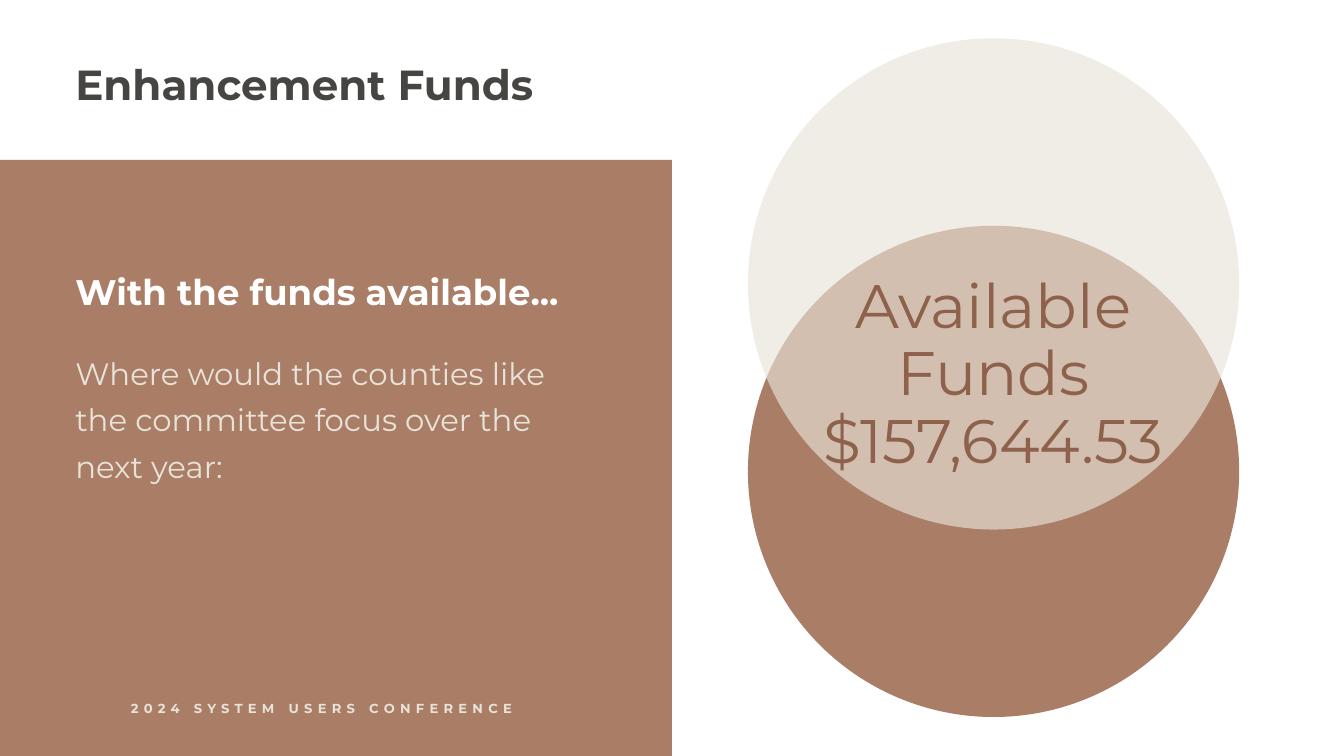
from lxml import etree
from pptx import Presentation
from pptx.dml.color import RGBColor
from pptx.enum.shapes import MSO_SHAPE
from pptx.enum.text import MSO_ANCHOR, MSO_AUTO_SIZE, PP_ALIGN
from pptx.oxml.ns import qn
from pptx.util import Inches, Pt

RECTANGLE, OVAL = MSO_SHAPE.RECTANGLE, MSO_SHAPE.OVAL
LEFT, CENTER = PP_ALIGN.LEFT, PP_ALIGN.CENTER
TOP, NO_FIT = MSO_ANCHOR.TOP, MSO_AUTO_SIZE.NONE

FONT = "Montserrat"
COLORS = {
    "clay": "AA7D66",
    "dark_clay": "8D614B",
    "sand": "E8E3D9",
    "charcoal": "464542",
    "white": "FFFFFF",
}
MARGIN = 1.12
CIRCLE_LEFT, CIRCLE_SIZE = 11.13, 7.31


def color(name):
    return RGBColor.from_string(COLORS[name])


def add_filled_shape(page, kind, left, top, width, height, fill, opacity=100):
    shape = page.shapes.add_shape(
        kind, Inches(left), Inches(top), Inches(width), Inches(height))
    shape.shadow.inherit = False
    shape.fill.solid()
    shape.fill.fore_color.rgb = color(fill)
    shape.line.fill.background()
    if opacity < 100:
        tone = shape.fill._xPr.find(".//" + qn("a:srgbClr"))
        etree.SubElement(tone, qn("a:alpha"), val=str(opacity * 1000))
    return shape


def add_text_box(page):
    return page.shapes.add_textbox(0, 0, 0, 0)


def write_text(box, place, lines, size, leading, tone,
               bold=False, align=LEFT, tracking=0):
    """Place a text box or placeholder and fill it, one paragraph a line."""
    box.left, box.top, box.width, box.height = [Inches(n) for n in place]
    frame = box.text_frame
    frame.word_wrap = True
    frame.auto_size = NO_FIT
    frame.vertical_anchor = TOP
    frame.margin_left = frame.margin_right = 0
    frame.margin_top = frame.margin_bottom = 0
    for index, line in enumerate(lines):
        para = frame.add_paragraph() if index else frame.paragraphs[0]
        para.alignment = align
        para.line_spacing = Pt(leading)
        para.space_before = Pt(0)
        span = para.add_run()
        span.text = line
        span.font.name = FONT
        span.font.size = Pt(size)
        span.font.bold = bold
        span.font.color.rgb = color(tone)
        if tracking:
            span.font._element.set("spc", str(int(tracking * 100)))


def remove_bullets(box):
    for para in box.text_frame.paragraphs:
        properties = para._p.get_or_add_pPr()
        properties.set("marL", "0")
        properties.set("indent", "0")
        etree.SubElement(properties, qn("a:buNone"))


def send_to_back(page, shape):
    page.shapes._spTree.insert(2, shape._element)


def main():
    deck = Presentation()
    deck.slide_width, deck.slide_height = Inches(20), Inches(11.25)
    page = deck.slides.add_slide(deck.slide_layouts[1])

    # Left panel, behind the placeholders
    panel = add_filled_shape(page, RECTANGLE, 0, 2.38, 10, 8.87, "clay")
    send_to_back(page, panel)

    # Title and question
    write_text(page.shapes.title, (MARGIN, 0.93, 7.31, 1.39),
               ["Enhancement Funds"], 45, 49.5, "charcoal", bold=True)
    question = page.placeholders[1]
    write_text(question, (MARGIN, 5.13, 7.44, 2.02),
               ["Where would the counties like the committee focus "
                "over the next year:"], 33, 49.8, "sand")
    remove_bullets(question)

    # Overlapping circles
    for top, fill, opacity in ((3.36, "clay", 100), (0.57, "sand", 65)):
        add_filled_shape(page, OVAL, CIRCLE_LEFT, top,
                         CIRCLE_SIZE, CIRCLE_SIZE, fill, opacity)

    # Amount, panel heading and footer
    write_text(add_text_box(page), (12.16, 4.06, 5.25, 2.99),
               ["Available Funds", "$157,644.53"], 65.7, 72.3, "dark_clay",
               align=CENTER)
    write_text(add_text_box(page), (MARGIN, 4.07, 7.51, 0.58),
               ["With the funds available..."], 38, 41.8, "white", bold=True)
    write_text(add_text_box(page), (1.65, 10.45, 6.27, 0.22),
               ["2024 SYSTEM USERS CONFERENCE"], 14, 15.4, "sand",
               bold=True, align=CENTER, tracking=5.6)

    deck.save("out.pptx")


if __name__ == "__main__":
    main()
